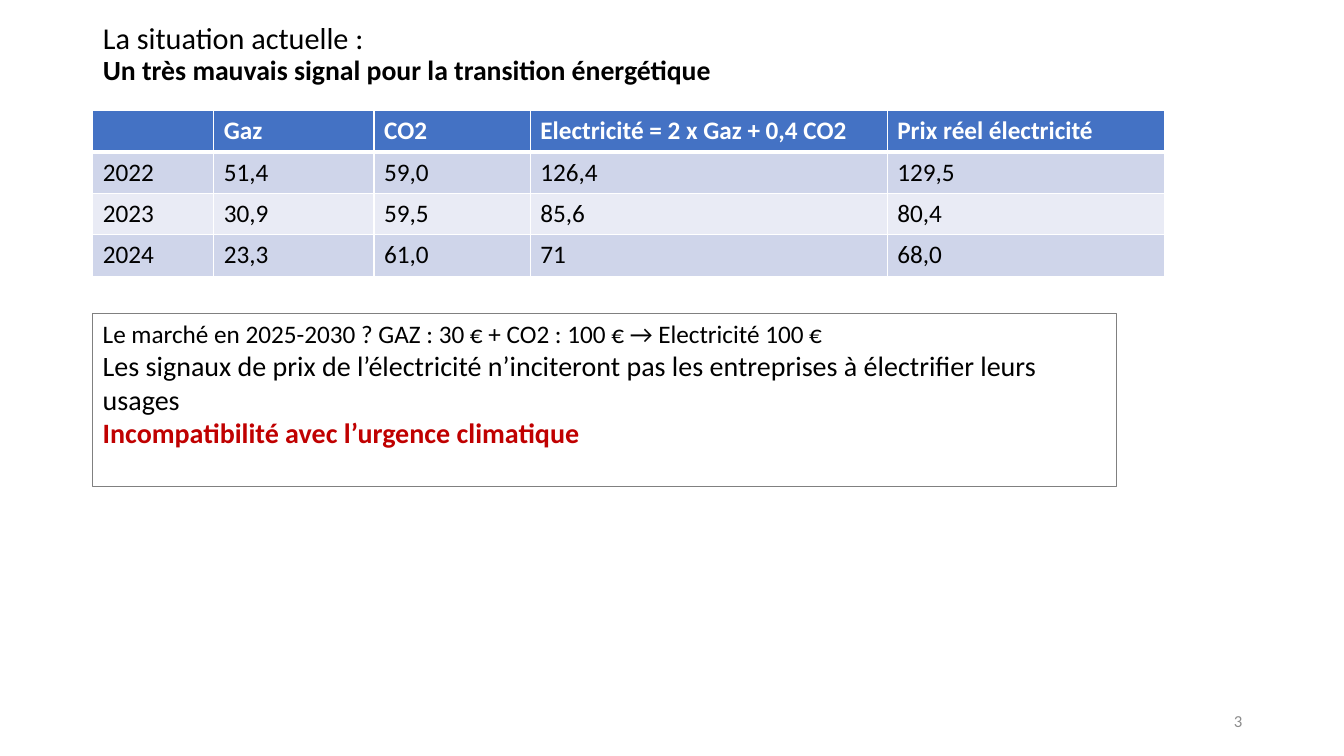
from lxml.etree import SubElement
from pptx import Presentation
from pptx.dml.color import RGBColor
from pptx.enum.shapes import MSO_SHAPE as Shape
from pptx.enum.text import MSO_ANCHOR as Anchor, MSO_AUTO_SIZE as Fit, PP_ALIGN as Align
from pptx.oxml.ns import qn
from pptx.util import Pt

SCALE = 9144


def px(n):
    return n * SCALE


def rgb(code):
    return RGBColor.from_string(code)


class Deck:
    """Holds the style and the current slide, with one method per element."""

    face = "Calibri"
    ink, white, grey, red = "000000", "FFFFFF", "8C8C8C", "C00000"
    edge, head, bands = "808080", "4472C4", ("CFD5EA", "E9EBF5")

    def __init__(self, wide, high):
        self.prs = Presentation()
        self.prs.slide_width, self.prs.slide_height = px(wide), px(high)
        self.slide = self.prs.slides.add_slide(self.prs.slide_layouts[5])

    def style(self, para, size, color=ink, bold=False, align=Align.LEFT):
        para.alignment = align
        font = para.font
        font.name, font.size, font.bold = self.face, Pt(size), bold
        font.color.rgb = rgb(color)

    def title(self, box, lines):
        shape = self.slide.shapes.title
        shape.left, shape.top, shape.width, shape.height = map(px, box)
        frame = shape.text_frame
        frame.auto_size, frame.vertical_anchor = Fit.NONE, Anchor.MIDDLE
        para = frame.paragraphs[0]
        self.style(para, lines[0][1])
        para.line_spacing = 0.9
        for i, (text, size, bold) in enumerate(lines):
            if i:
                para.add_line_break()
            run = para.add_run()
            run.text, run.font.size, run.font.bold = text, Pt(size), bold

    def panel(self, box, lines):
        shape = self.slide.shapes.add_shape(Shape.RECTANGLE, *map(px, box))
        shape.shadow.inherit = False
        shape.fill.background()
        shape.line.color.rgb, shape.line.width = rgb(self.edge), Pt(0.75)
        frame = shape.text_frame
        frame.word_wrap, frame.vertical_anchor = True, Anchor.TOP
        for i, (text, *look) in enumerate(lines):
            para = frame.add_paragraph() if i else frame.paragraphs[0]
            para.text = text
            self.style(para, *look)

    def border(self, cell, side, width):
        line = SubElement(cell._tc.get_or_add_tcPr(), qn(f"a:ln{side}"), w=str(Pt(width)))
        fill = SubElement(line, qn("a:solidFill"))
        SubElement(fill, qn("a:srgbClr"), val=self.white)

    def table(self, left, top, cols, high, rows):
        grid = self.slide.shapes.add_table(
            len(rows), len(cols), px(left), px(top), px(sum(cols)), px(high * len(rows))
        ).table
        for col, wide in zip(grid.columns, cols):
            col.width = px(wide)
        for r, row in enumerate(rows):
            first = r == 0
            for c, text in enumerate(row):
                cell = grid.cell(r, c)
                for side in "LRTB":
                    thick = (r, side) in ((0, "B"), (1, "T"))
                    self.border(cell, side, 3 if thick else 1)
                cell.fill.solid()
                cell.fill.fore_color.rgb = rgb(self.head if first else self.bands[(r - 1) % 2])
                cell.text = text
                para = cell.text_frame.paragraphs[0]
                self.style(para, 18, self.white if first else self.ink, first)

    def label(self, box, text, size, color, align):
        frame = self.slide.shapes.add_textbox(*map(px, box)).text_frame
        frame.word_wrap, frame.vertical_anchor = True, Anchor.MIDDLE
        frame.text = text
        self.style(frame.paragraphs[0], size, color, align=align)


def main():
    deck = Deck(1333, 750)
    deck.title((92, 18, 1150, 73), [
        ("La situation actuelle :", 21.6, False),
        ("Un très mauvais signal pour la transition énergétique", 19.8, True),
    ])
    deck.panel((92, 311, 1015, 172), [
        ("Le marché en 2025-2030 ? GAZ : 30 € + CO2 : 100 € → Electricité 100 €", 18),
        ("Les signaux de prix de l’électricité n’inciteront pas "
         "les entreprises à électrifier leurs usages", 20),
        ("Incompatibilité avec l’urgence climatique", 20, deck.red, True),
    ])
    deck.table(92, 110, (120, 159, 155, 354, 275), 41, [
        ("", "Gaz", "CO2", "Electricité = 2 x Gaz + 0,4 CO2", "Prix réel électricité"),
        ("2022", "51,4", "59,0", "126,4", "129,5"),
        ("2023", "30,9", "59,5", "85,6", "80,4"),
        ("2024", "23,3", "61,0", "71", "68,0"),
    ])
    deck.label((942, 695, 300, 40), "3", 12, deck.grey, Align.RIGHT)
    deck.prs.save("out.pptx")


if __name__ == "__main__":
    main()
